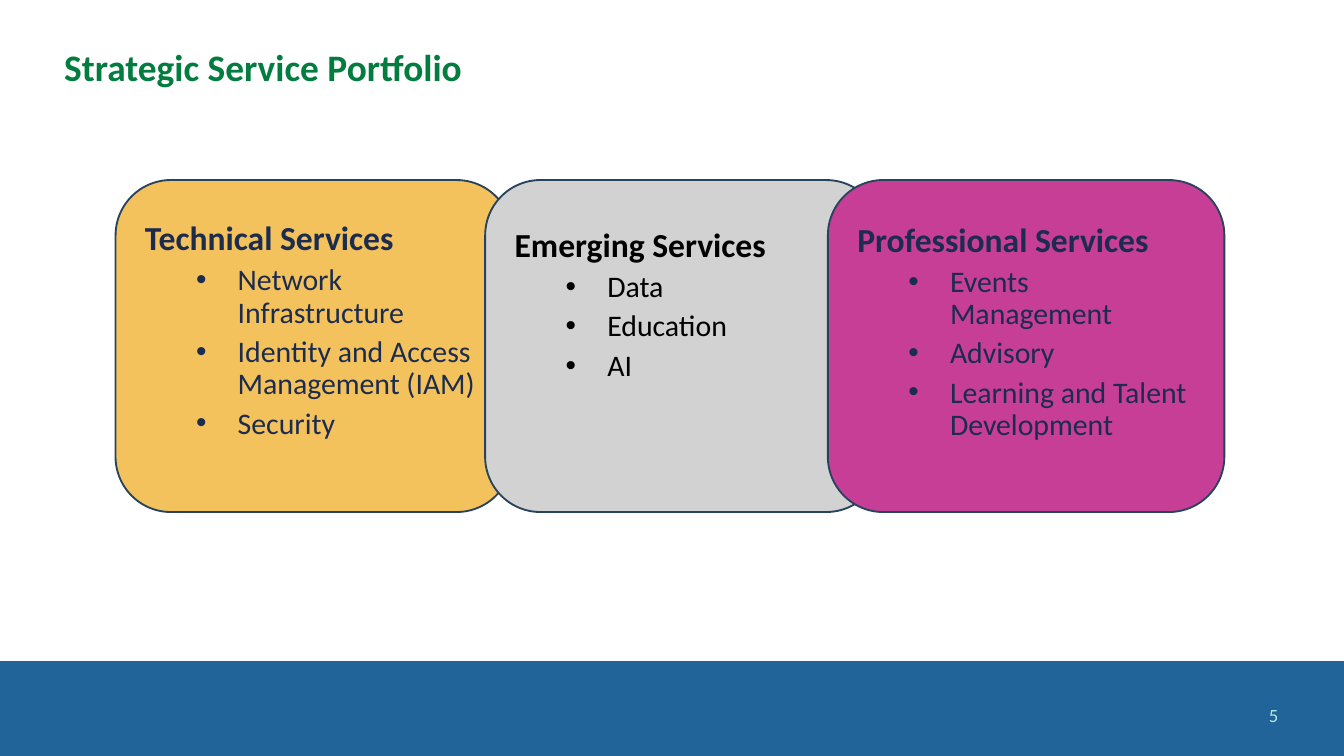
import pptx
import pptx.util
import pptx.dml.color
import pptx.enum.shapes
import pptx.enum.text
from dataclasses import dataclass
from lxml import etree

Inches = pptx.util.Inches
Pt = pptx.util.Pt
Align = pptx.enum.text.PP_ALIGN
Anchor = pptx.enum.text.MSO_ANCHOR
Preset = pptx.enum.shapes.MSO_SHAPE

TITLE = "Strategic Service Portfolio"
PAGE_NUMBER = "5"
SERVICES = [
    {
        "heading": "Technical Services",
        "items": ["Network Infrastructure", "Identity and Access Management (IAM)", "Security"],
        "fill": "F3C25C", "ink": "1C2C4F", "left": 0.86, "inset": 0.19,
    },
    {
        "heading": "Emerging Services",
        "items": ["Data", "Education", "AI"],
        "fill": "D2D2D2", "ink": "000000", "left": 3.61, "inset": 0.24,
    },
    {
        "heading": "Professional Services",
        "items": ["Events Management", "Advisory", "Learning and Talent Development"],
        "fill": "C63E96", "ink": "1C2C4F", "left": 6.16, "inset": 0.2,
    },
]


@dataclass(frozen=True)
class Theme:
    font: str = "Calibri"
    title: str = "037C3F"
    footer: str = "20649A"
    number: str = "B4E9E2"
    outline: str = "28445D"
    title_size: int = 20
    heading_size: int = 18
    item_size: int = 16
    number_size: int = 10


THEME = Theme()
SLIDE_WIDTH = 10
SLIDE_HEIGHT = SLIDE_WIDTH * 9 / 16
FOOTER_TOP = 4.92
CARD_TOP, CARD_WIDTH, CARD_HEIGHT = 1.34, 2.95, 2.47
ITEM_INDENT, BULLET_HANG = 0.69, 0.31


def rgb(value):
    return pptx.dml.color.RGBColor.from_string(value)


def add_bullet(paragraph):
    paragraph.level = 1
    properties = paragraph._p.get_or_add_pPr()
    properties.set("marL", str(Inches(ITEM_INDENT)))
    properties.set("indent", str(-Inches(BULLET_HANG)))
    for tag, name, value in (("buFont", "typeface", "Arial"), ("buChar", "char", "•")):
        etree.SubElement(properties, pptx.oxml.ns.qn(f"a:{tag}")).set(name, value)


def write(frame, text, *, size, color, bold=False, align=Align.LEFT,
          spacing=0.9, before=0, bullet=False):
    first = frame.paragraphs[0]
    paragraph = frame.add_paragraph() if first.runs else first
    if bullet:
        add_bullet(paragraph)
    paragraph.alignment = align
    paragraph.line_spacing = spacing
    paragraph.space_before = Pt(before)
    run = paragraph.add_run()
    run.text = text
    run.font.name = THEME.font
    run.font.size = Pt(size)
    run.font.bold = bold
    run.font.color.rgb = rgb(color)


def add_panel(slide, preset, left, top, width, height, fill, outline=None):
    panel = slide.shapes.add_shape(
        preset, Inches(left), Inches(top), Inches(width), Inches(height))
    panel.shadow.inherit = False
    panel.fill.solid()
    panel.fill.fore_color.rgb = rgb(fill)
    if outline:
        panel.line.color.rgb = rgb(outline)
        panel.line.width = Pt(1)
    else:
        panel.line.fill.background()
    return panel


def add_label(slide, left, top, width, height):
    frame = slide.shapes.add_textbox(
        Inches(left), Inches(top), Inches(width), Inches(height)).text_frame
    frame.word_wrap = True
    frame.vertical_anchor = Anchor.MIDDLE
    return frame


def add_service(slide, service):
    card = add_panel(slide, Preset.ROUNDED_RECTANGLE, service["left"], CARD_TOP,
                     CARD_WIDTH, CARD_HEIGHT, service["fill"], THEME.outline)
    frame = card.text_frame
    frame.word_wrap = True
    frame.vertical_anchor = Anchor.TOP
    frame.margin_top = Inches(service["inset"])
    write(frame, service["heading"], size=THEME.heading_size,
          color=service["ink"], bold=True)
    for item in service["items"]:
        write(frame, item, size=THEME.item_size, color=service["ink"],
              before=3.8, bullet=True)


def main():
    deck = pptx.Presentation()
    deck.slide_width = Inches(SLIDE_WIDTH)
    deck.slide_height = Inches(SLIDE_HEIGHT)
    slide = deck.slides.add_slide(deck.slide_layouts[6])

    add_panel(slide, Preset.RECTANGLE, 0, FOOTER_TOP, SLIDE_WIDTH,
              SLIDE_HEIGHT - FOOTER_TOP, THEME.footer)
    write(add_label(slide, 7.36, 5.17, 2.25, 0.3), PAGE_NUMBER,
          size=THEME.number_size, color=THEME.number, align=Align.RIGHT, spacing=1.0)
    write(add_label(slide, 0.38, 0.14, 9.23, 0.76), TITLE,
          size=THEME.title_size, color=THEME.title, bold=True)
    for service in SERVICES:
        add_service(slide, service)

    deck.save("out.pptx")


if __name__ == "__main__":
    main()
